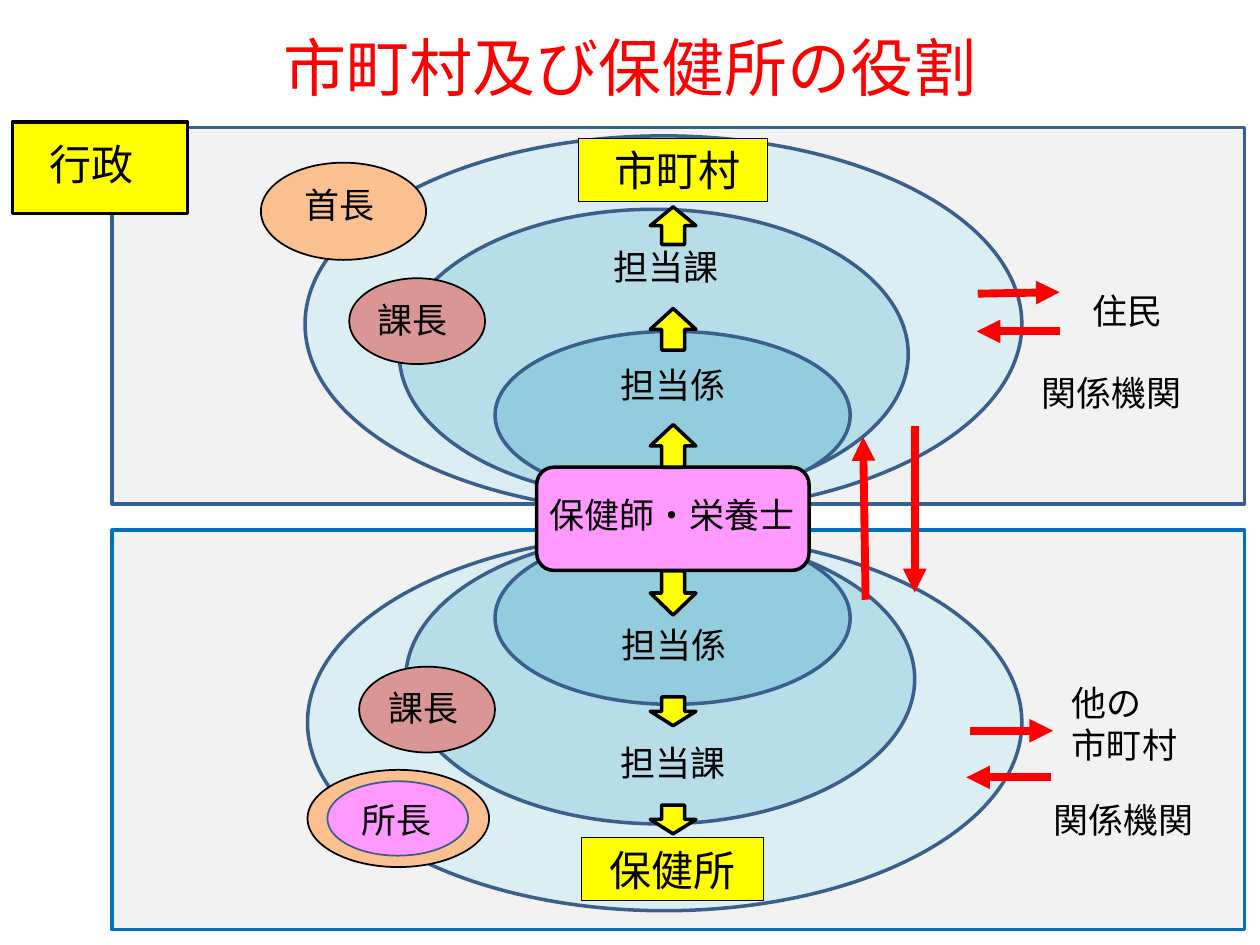
from typing import NamedTuple

from lxml.etree import SubElement
from pptx import Presentation
from pptx.dml.color import RGBColor
from pptx.enum.shapes import MSO_CONNECTOR, MSO_SHAPE
from pptx.enum.text import MSO_ANCHOR, PP_ALIGN
from pptx.oxml.ns import qn
from pptx.util import Cm, Pt

FONT = "Calibri"
BLACK = RGBColor(0x00, 0x00, 0x00)
RED = RGBColor(0xFF, 0x00, 0x00)
YELLOW = RGBColor(0xFF, 0xFF, 0x00)
PINK = RGBColor(0xFF, 0x99, 0xFF)
ORANGE = RGBColor(0xFA, 0xC0, 0x90)
ROSE = RGBColor(0xD9, 0x96, 0x94)
GREY = RGBColor(0xF2, 0xF2, 0xF2)
PALE_TEAL = RGBColor(0xDB, 0xEE, 0xF4)
LIGHT_TEAL = RGBColor(0xB7, 0xDE, 0xE8)
TEAL = RGBColor(0x93, 0xCD, 0xDD)
NAVY = RGBColor(0x3A, 0x5F, 0x8C)
PANEL_BLUE = RGBColor(0x37, 0x60, 0x92)
BRIGHT_BLUE = RGBColor(0x00, 0x70, 0xC0)

LABEL_HEIGHT = 1.32
ARROW_LEFT = 13.11
ARROW_WIDTH = 0.92


class Box(NamedTuple):
    """Position and size in centimetres."""
    left: float
    top: float
    width: float
    height: float = LABEL_HEIGHT


class Figure(NamedTuple):
    kind: MSO_SHAPE
    box: Box
    fill: RGBColor
    line: RGBColor = NAVY
    line_width: float = 2


class Label(NamedTuple):
    text: str
    box: Box
    align: PP_ALIGN = PP_ALIGN.LEFT
    size: int = 20


class Flow(NamedTuple):
    """Start and end of a red arrow in centimetres."""
    start_x: float
    start_y: float
    end_x: float
    end_y: float


def write_text(shape, text: str, size: int, align: PP_ALIGN, color: RGBColor = BLACK) -> None:
    text_frame = shape.text_frame
    text_frame.word_wrap = True
    text_frame.text = text
    for paragraph in text_frame.paragraphs:
        paragraph.alignment = align
        for run in paragraph.runs:
            run.font.name = FONT
            run.font.size = Pt(size)
            run.font.color.rgb = color


def draw_figure(slide, figure: Figure):
    shape = slide.shapes.add_shape(figure.kind, *map(Cm, figure.box))
    shape.shadow.inherit = False
    shape.fill.solid()
    shape.fill.fore_color.rgb = figure.fill
    shape.line.color.rgb = figure.line
    shape.line.width = Pt(figure.line_width)
    return shape


def draw_label(slide, label: Label) -> None:
    text_box = slide.shapes.add_textbox(*map(Cm, label.box))
    write_text(text_box, label.text, label.size, label.align)


def draw_sign(slide, text: str, box: Box) -> None:
    sign = draw_figure(slide, Figure(MSO_SHAPE.RECTANGLE, box, YELLOW, BLACK, 0.75))
    sign.text_frame.vertical_anchor = MSO_ANCHOR.TOP
    write_text(sign, text, 24, PP_ALIGN.CENTER)


def draw_flow(slide, flow: Flow) -> None:
    connector = slide.shapes.add_connector(MSO_CONNECTOR.STRAIGHT, *map(Cm, flow))
    connector.line.color.rgb = RED
    connector.line.width = Pt(4.5)
    properties = connector._element.spPr
    SubElement(properties.find(qn("a:ln")), qn("a:tailEnd"), type="triangle")
    SubElement(properties, qn("a:effectLst"))


RECTANGLE, OVAL = MSO_SHAPE.RECTANGLE, MSO_SHAPE.OVAL
CENTER = PP_ALIGN.CENTER

# Panels, nested organisation ovals, officers and the central role
FIGURES = [
    Figure(RECTANGLE, Box(2.26, 2.57, 22.83, 7.59), GREY, PANEL_BLUE),
    Figure(RECTANGLE, Box(2.26, 10.69, 22.83, 8.05), GREY, BRIGHT_BLUE),
    Figure(OVAL, Box(6.15, 2.74, 14.45, 7.59), PALE_TEAL),
    Figure(OVAL, Box(6.2, 10.77, 14.4, 7.59), PALE_TEAL),
    Figure(OVAL, Box(8.05, 4.22, 10.26, 5.84), LIGHT_TEAL),
    Figure(OVAL, Box(8.18, 10.77, 10.26, 5.84), LIGHT_TEAL),
    Figure(OVAL, Box(9.98, 6.68, 7.16, 3.38), TEAL),
    Figure(OVAL, Box(9.98, 10.72, 7.16, 3.48), TEAL),
    Figure(RECTANGLE, Box(0.25, 2.46, 3.53, 1.85), YELLOW, BLACK),
    Figure(OVAL, Box(5.26, 3.28, 3.33, 1.96), ORANGE, BLACK, 1),
    Figure(OVAL, Box(7.04, 5.61, 2.74, 1.73), ROSE, BLACK, 1),
    Figure(OVAL, Box(7.24, 13.44, 2.74, 1.73), ROSE, BLACK, 1),
    Figure(OVAL, Box(6.2, 15.52, 3.66, 1.96), ORANGE, BLACK, 1),
    Figure(OVAL, Box(6.6, 15.75, 2.84, 1.5), PINK, NAVY, 1),
    Figure(MSO_SHAPE.ROUNDED_RECTANGLE, Box(10.82, 9.42, 5.49, 2.08), PINK, BLACK),
]

SIGNS = [
    (" 市町村", Box(11.66, 2.79, 3.81, 1.27)),
    ("保健所", Box(11.73, 16.89, 3.66, 1.27)),
]

LABELS = [
    Label(" 行政", Box(0.56, 2.67, 2.72, 1.52), size=24),
    Label("首長", Box(5.89, 3.58, 2.06)),
    Label("課長", Box(7.37, 5.89, 2.11)),
    Label("課長", Box(7.59, 13.72, 2.34)),
    Label("所長", Box(7.04, 15.98, 2.36)),
    Label("担当課", Box(11.66, 4.83, 3.53), CENTER),
    Label("担当係", Box(11.86, 7.21, 3.4), CENTER),
    Label("保健師・栄養士", Box(10.82, 9.83, 5.49)),
    Label("担当係", Box(11.99, 12.45, 3.18), CENTER),
    Label("担当課", Box(11.91, 14.83, 3.33), CENTER),
    Label("住民", Box(21.77, 5.72, 2.13)),
    Label("関係機関", Box(20.75, 7.37, 3.56)),
    Label("他の\n市町村", Box(21.36, 13.61, 3.18, 2.34)),
    Label("関係機関", Box(20.98, 15.98, 3.73)),
]

# Top and height of each block arrow on the central axis
BLOCK_ARROWS = {
    MSO_SHAPE.UP_ARROW: [(4.17, 0.76), (6.22, 0.84), (8.56, 0.86)],
    MSO_SHAPE.DOWN_ARROW: [(11.51, 0.89), (14.05, 0.58), (16.23, 0.58)],
}

FLOWS = [
    Flow(18.44, 8.59, 18.44, 11.94),
    Flow(17.45, 12.09, 17.4, 8.81),
    Flow(19.71, 5.92, 21.36, 5.89),
    Flow(21.36, 6.68, 19.69, 6.68),
    Flow(19.56, 14.73, 21.23, 14.73),
    Flow(21.18, 15.67, 19.48, 15.67),
]


def main() -> None:
    presentation = Presentation()
    presentation.slide_width = Cm(25.4)
    presentation.slide_height = Cm(19.05)
    slide = presentation.slides.add_slide(presentation.slide_layouts[5])

    # Title
    title = slide.shapes.title
    title.left, title.top, title.width, title.height = map(Cm, (1.27, -0.25, 22.86, 3.18))
    title.text_frame.vertical_anchor = MSO_ANCHOR.MIDDLE
    write_text(title, "市町村及び保健所の役割", 36, CENTER, RED)

    # Diagram
    for figure in FIGURES:
        draw_figure(slide, figure)
    for text, box in SIGNS:
        draw_sign(slide, text, box)
    for kind, spans in BLOCK_ARROWS.items():
        for top, height in spans:
            box = Box(ARROW_LEFT, top, ARROW_WIDTH, height)
            draw_figure(slide, Figure(kind, box, YELLOW, BLACK))
    for flow in FLOWS:
        draw_flow(slide, flow)
    for label in LABELS:
        draw_label(slide, label)

    presentation.save("out.pptx")


if __name__ == "__main__":
    main()
